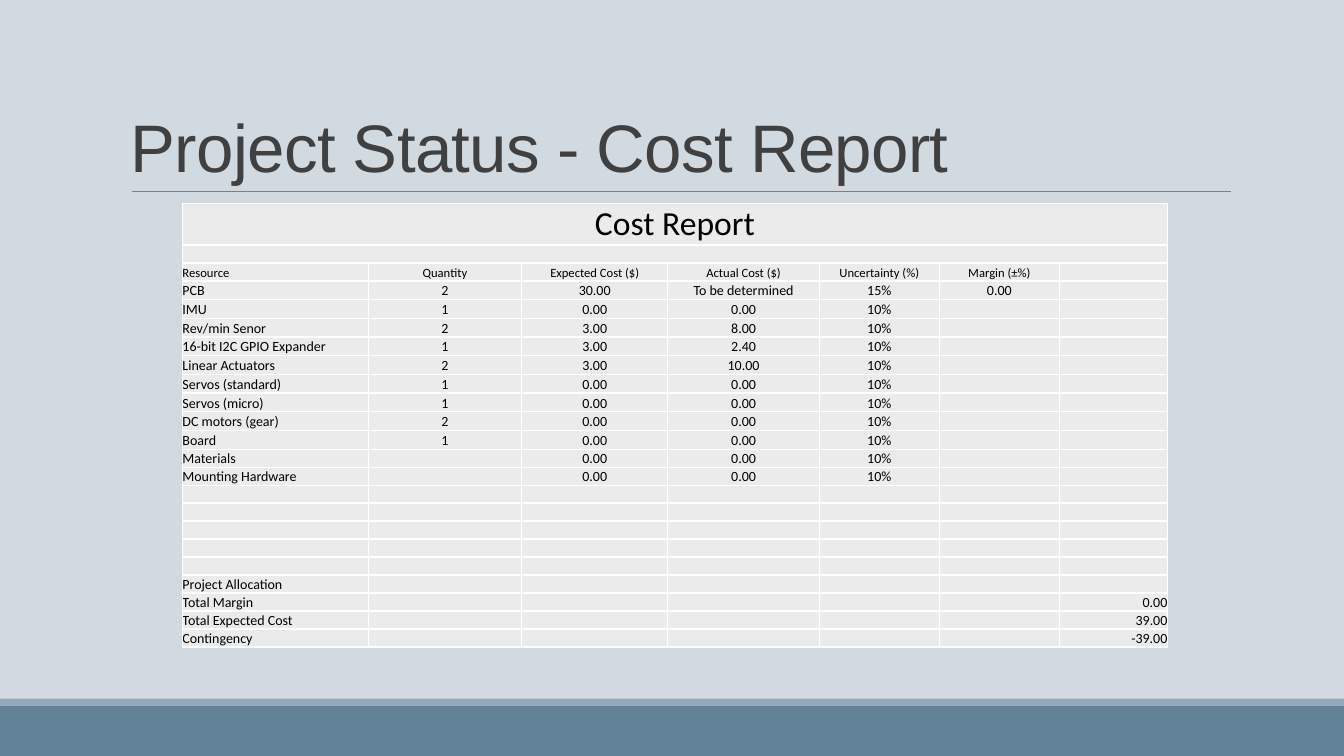
from lxml import etree
from pptx import Presentation, util as u
from pptx.dml.color import RGBColor
from pptx.enum import shapes, text
from pptx.oxml.ns import qn

W, H = 13.33, 7.5
COLS = [1.84, 1.52, 1.45, 1.5, 1.19, 1.19, 1.07]
ITEMS = [
    ("PCB", "2", "30.00", "To be determined", "15%", "0.00"),
    ("IMU", "1", "0.00", "0.00", "10%"),
    ("Rev/min Senor", "2", "3.00", "8.00", "10%"),
    ("16-bit I2C GPIO Expander", "1", "3.00", "2.40", "10%"),
    ("Linear Actuators", "2", "3.00", "10.00", "10%"),
    ("Servos (standard)", "1", "0.00", "0.00", "10%"),
    ("Servos (micro)", "1", "0.00", "0.00", "10%"),
    ("DC motors (gear)", "2", "0.00", "0.00", "10%"),
    ("Board", "1", "0.00", "0.00", "10%"),
    ("Materials", "", "0.00", "0.00", "10%"),
    ("Mounting Hardware", "", "0.00", "0.00", "10%"),
]
TOTALS = [("Project Allocation", ""), ("Total Margin", "0.00"),
          ("Total Expected Cost", "39.00"), ("Contingency", "-39.00")]
HEADER = ("Resource", "Quantity", "Expected Cost ($)", "Actual Cost ($)",
          "Uncertainty (%)", "Margin (±%)")
ROWS = ([("Cost Report",), (), HEADER] + ITEMS + [()] * 5
        + [(name, "", "", "", "", "", total) for name, total in TOTALS])
TITLE_ROW, SPACER_ROW, HEADER_ROW = 0, 1, 2
TALL_ROWS = range(3, 12)


def rgb(value):
    """Turn a hex string into a colour."""
    return RGBColor.from_string(value)


def style_font(font, name, size, color):
    """Set the face, size and colour of a font."""
    font.name, font.size, font.color.rgb = name, u.Pt(size), rgb(color)


def add_band(s, x, y, w, h, color):
    """Draw one plain filled rectangle."""
    sp = s.shapes.add_shape(shapes.MSO_SHAPE.RECTANGLE, *map(u.Inches, (x, y, w, h)))
    sp.shadow.inherit = False
    sp.fill.solid()
    sp.fill.fore_color.rgb = rgb(color)
    sp.line.fill.background()


def add_footer(s, x, y, w, h):
    """Draw the footer bar with its thin lighter strip on top."""
    strip = h / 8
    add_band(s, x, y + strip, w, h - strip, "618197")
    add_band(s, x, y, w, strip, "92A9B9")


def add_title(s, x, y, w, h):
    """Place the slide title and the rule beneath it."""
    rule = s.shapes.add_connector(
        shapes.MSO_CONNECTOR.STRAIGHT,
        *map(u.Inches, (x + 0.11, y + h, x + w + 0.01, y + h)))
    rule.line.color.rgb = rgb("808080")
    rule.line.width = u.Pt(0.5)
    etree.SubElement(rule._element.spPr, qn("a:effectLst"))
    tf = s.shapes.add_textbox(*map(u.Inches, (x, y, w, h))).text_frame
    tf.word_wrap = True
    tf.vertical_anchor = text.MSO_ANCHOR.BOTTOM
    p = tf.paragraphs[0]
    p.text = "Project Status - Cost Report"
    p.line_spacing = 0.85
    r = p.runs[0]
    style_font(r.font, "Arial", 48, "404040")
    r.font._element.set("spc", "-50")


def add_borders(cell, color):
    """Give a cell a one-point border on each side."""
    tc_pr = cell._tc.get_or_add_tcPr()
    for i, side in enumerate(("lnL", "lnR", "lnT", "lnB")):
        ln = etree.Element(qn("a:" + side), w=str(u.Pt(1)))
        fill = etree.SubElement(ln, qn("a:solidFill"))
        etree.SubElement(fill, qn("a:srgbClr"), val=color)
        tc_pr.insert(i, ln)


def fill_cell(cell, value, size, align, anchor):
    """Write and format one table cell."""
    cell.margin_left = cell.margin_right = cell.margin_top = cell.margin_bottom = 0
    cell.vertical_anchor = anchor
    cell.fill.solid()
    cell.fill.fore_color.rgb = rgb("EBEBEB")
    add_borders(cell, "FFFFFF")
    p = cell.text_frame.paragraphs[0]
    p.text = value
    p.alignment = align
    for r in p.runs:
        style_font(r.font, "Calibri", size, "000000")
    if not value:
        etree.SubElement(p._p, qn("a:endParaRPr"), sz=str(size * 100))


def add_cost_table(s, x, y, w, h):
    """Build the cost table, sharing the height out by row weight."""
    table = s.shapes.add_table(len(ROWS), len(COLS), *map(u.Inches, (x, y, w, h))).table
    table.first_row = table.horz_banding = False
    for column, share in zip(table.columns, COLS):
        column.width = u.Inches(w * share / sum(COLS))
    weights = [2.3 if i == TITLE_ROW else 1.04 if i in TALL_ROWS else 1
               for i in range(len(ROWS))]
    for i, values in enumerate(ROWS):
        table.rows[i].height = u.Inches(h * weights[i] / sum(weights))
        size = {TITLE_ROW: 24, HEADER_ROW: 9}.get(i, 10)
        anchor = text.MSO_ANCHOR.MIDDLE if i == TITLE_ROW else text.MSO_ANCHOR.BOTTOM
        for j in range(len(COLS)):
            align = text.PP_ALIGN.CENTER
            if j == 0 and i != TITLE_ROW:
                align = text.PP_ALIGN.LEFT
            elif j == len(COLS) - 1:
                align = text.PP_ALIGN.RIGHT
            value = values[j] if j < len(values) else ""
            fill_cell(table.cell(i, j), value, size, align, anchor)
    for i in (TITLE_ROW, SPACER_ROW):
        table.cell(i, 0).merge(table.cell(i, len(COLS) - 1))


def main():
    """Build and save the cost report slide."""
    prs = Presentation()
    prs.slide_width, prs.slide_height = u.Inches(W), u.Inches(H)
    s = prs.slides.add_slide(prs.slide_layouts[6])
    s.background.fill.solid()
    s.background.fill.fore_color.rgb = rgb("D1D9E1")
    add_footer(s, 0, H - 0.57, W, 0.57)
    add_title(s, 1.2, 0.31, 11, 1.59)
    add_cost_table(s, 1.81, 2.02, 9.77, 4.4)
    prs.save("out.pptx")


if __name__ == "__main__":
    main()
